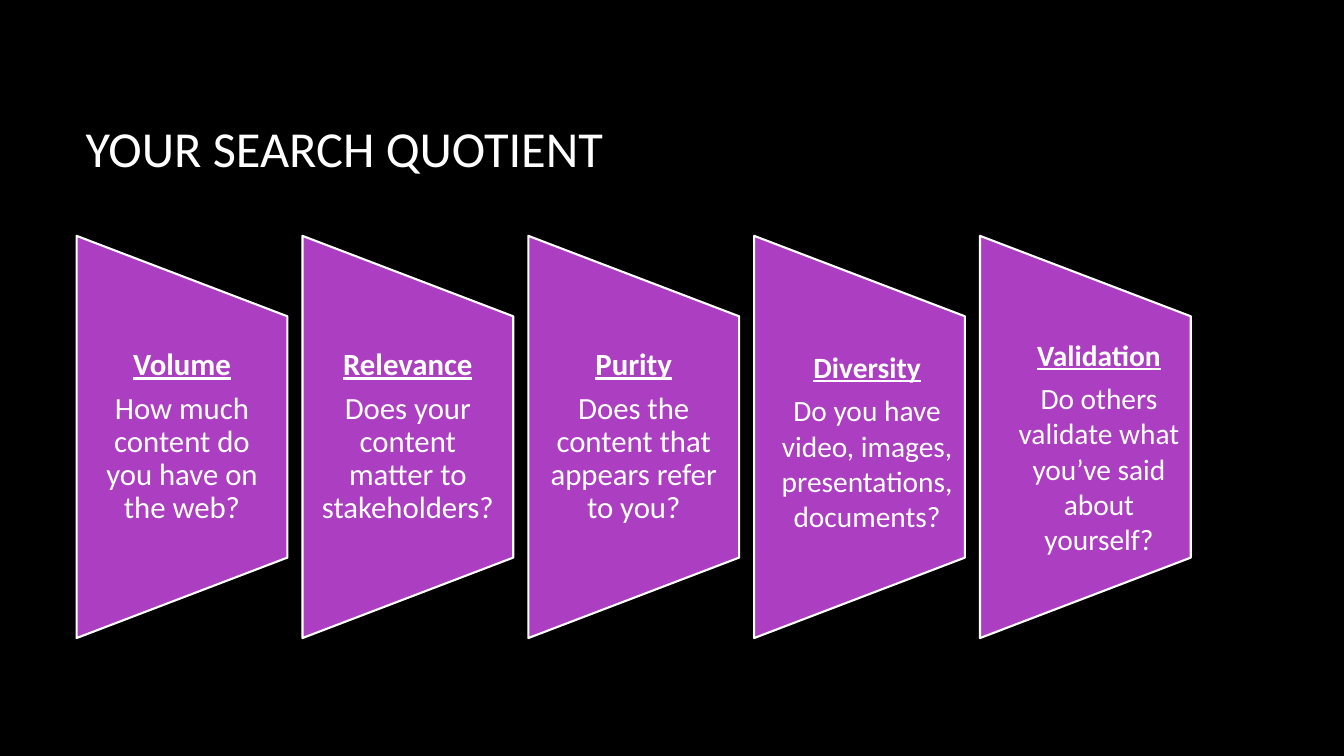
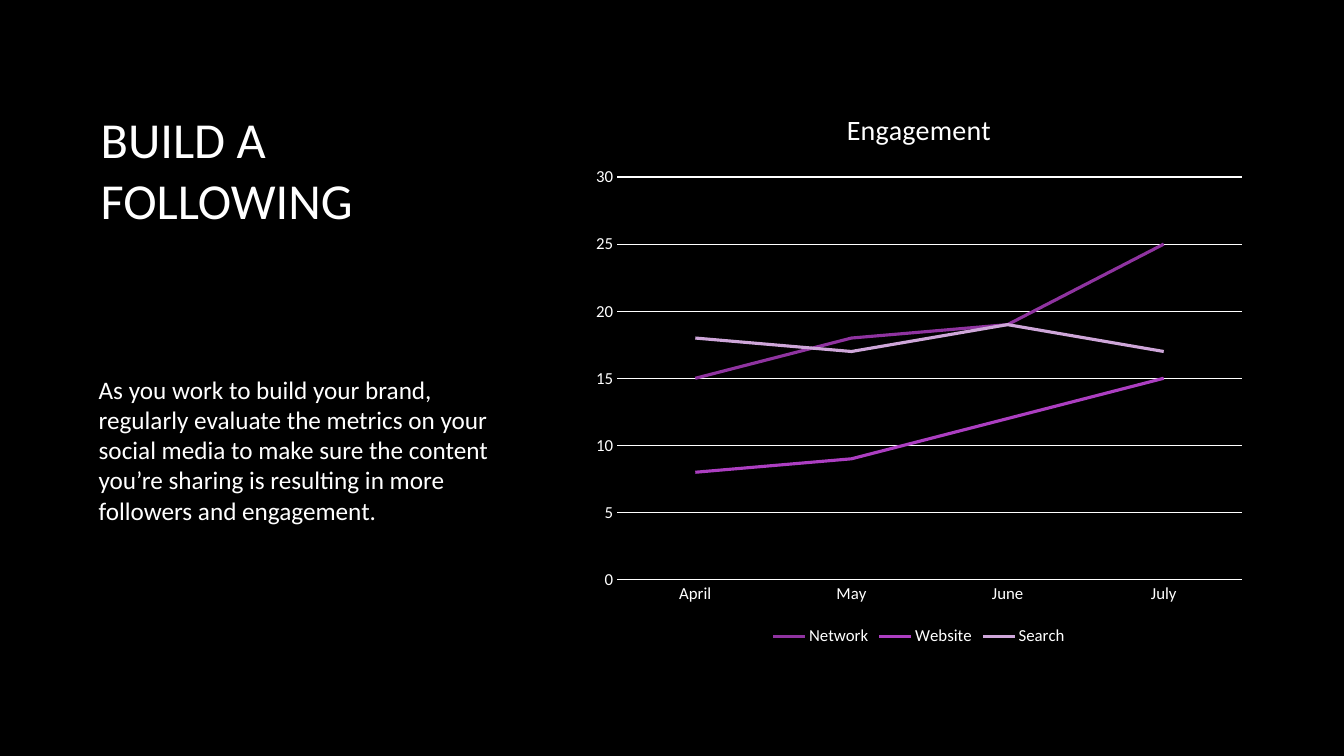
from dataclasses import dataclass

from lxml import etree
from pptx import Presentation
from pptx import util as u
from pptx.chart.data import CategoryChartData
from pptx.dml.color import RGBColor
from pptx.enum import chart as charts, shapes, text

Inches, Pt = u.Inches, u.Pt
CENTER = text.PP_ALIGN.CENTER
MIDDLE = text.MSO_ANCHOR.MIDDLE
TOP = text.MSO_ANCHOR.TOP


@dataclass(frozen=True)
class Theme:
    font: str = "Calibri"
    background: str = "000000"
    ink: str = "FFFFFF"
    panel: str = "AC3EC1"
    series: tuple = ("8F33A0", "AC3EC1", "CEA6D9")
    title_size: int = 36
    body_size: int = 18
    panel_size: int = 22
    note_size: int = 21
    chart_title_size: int = 20
    chart_size: int = 12


THEME = Theme()


def style_font(font, size, bold=False, underline=False):
    font.name = THEME.font
    font.size = Pt(size)
    font.bold = bold
    font.underline = underline
    font.color.rgb = RGBColor.from_string(THEME.ink)


def write(para, content, size, align=None, line_spacing=None,
          before=0, after=0, **font_format):
    para.alignment = align
    para.line_spacing = line_spacing
    para.space_before = Pt(before)
    para.space_after = Pt(after)
    span = para.add_run()
    span.text = content
    style_font(span.font, size, **font_format)


def set_line(line, colour, width):
    line.color.rgb = RGBColor.from_string(colour)
    line.width = Pt(width)


class Builder:
    def __init__(self):
        self.deck = Presentation()
        self.deck.slide_width = Inches(13.33)
        self.deck.slide_height = Inches(7.5)
        self.page = None

    def new_page(self):
        self.page = self.deck.slides.add_slide(self.deck.slide_layouts[6])
        fill = self.page.background.fill
        fill.solid()
        fill.fore_color.rgb = RGBColor.from_string(THEME.background)

    def text_box(self, left, top, width, height, anchor=MIDDLE, side=0.1, edge=0.05):
        box = self.page.shapes.add_textbox(
            Inches(left), Inches(top), Inches(width), Inches(height))
        frame = box.text_frame
        frame.word_wrap = True
        frame.vertical_anchor = anchor
        frame.margin_left = frame.margin_right = Inches(side)
        frame.margin_top = frame.margin_bottom = Inches(edge)
        return frame

    def title(self, content, left, top, width):
        frame = self.text_box(left, top, width, 1.59)
        write(frame.paragraphs[0], content, THEME.title_size)

    def body(self, content, left, top, width, height):
        frame = self.text_box(left, top, width, height)
        write(frame.paragraphs[0], content, THEME.body_size, after=10)

    def panel(self, left, top, width, height):
        """Draw a trapezoid on its side; the size is the one seen after turning."""
        shape = self.page.shapes.add_shape(
            shapes.MSO_SHAPE.FLOWCHART_MANUAL_OPERATION,
            Inches(left + (width - height) / 2), Inches(top + (height - width) / 2),
            Inches(height), Inches(width))
        shape.rotation = 270
        shape.shadow.inherit = False
        shape.fill.solid()
        shape.fill.fore_color.rgb = RGBColor.from_string(THEME.panel)
        set_line(shape.line, THEME.ink, 1.5)

    def heading_and_question(self, frame, heading, question, size, before=0, **spacing):
        write(frame.paragraphs[0], heading, size, align=CENTER,
              bold=True, underline=True, **spacing)
        write(frame.add_paragraph(), question, size, align=CENTER,
              before=before, **spacing)

    def line_chart(self, title, months, rows, left, top, width, height):
        data = CategoryChartData()
        data.categories = months
        for name, values in rows:
            data.add_series(name, values)
        chart = self.page.shapes.add_chart(
            charts.XL_CHART_TYPE.LINE, Inches(left), Inches(top),
            Inches(width), Inches(height), data).chart
        style_font(chart.font, THEME.chart_size)

        chart.has_title = True
        write(chart.chart_title.text_frame.paragraphs[0], title, THEME.chart_title_size)
        chart.chart_title.include_in_layout = False
        chart.has_legend = True
        chart.legend.position = charts.XL_LEGEND_POSITION.BOTTOM
        chart.legend.include_in_layout = False
        style_font(chart.legend.font, THEME.chart_size)

        for axis in (chart.category_axis, chart.value_axis):
            axis.major_tick_mark = axis.minor_tick_mark = charts.XL_TICK_MARK.NONE
            style_font(axis.tick_labels.font, THEME.chart_size)
        set_line(chart.category_axis.format.line, THEME.ink, 0.75)
        scale = chart.value_axis
        scale.minimum_scale, scale.maximum_scale, scale.major_unit = 0, 30, 5
        scale.format.line.fill.background()
        scale.has_major_gridlines = True
        set_line(scale.major_gridlines.format.line, THEME.ink, 0.75)

        plot = chart.plots[0]
        plot.vary_by_categories = False
        for series, colour in zip(plot.series, THEME.series):
            series.smooth = False
            series.marker.style = charts.XL_MARKER_STYLE.NONE
            set_line(series.format.line, colour, 2.25)


def build_quotient(builder):
    left, pitch, width = 0.76, 2.24, 2.09
    centred = (
        ("Volume", "How much content do you have on the web?"),
        ("Relevance", "Does your content matter to stakeholders?"),
        ("Purity", "Does the content that appears refer to you?"),
    )
    placed = (
        ("Diversity", "Do you have video, images, presentations, documents?",
         7.58, 3.41, 1.95),
        ("Validation", "Do others validate what you’ve said about yourself?",
         9.88, 3.29, 2.31),
    )
    builder.new_page()
    builder.title("YOUR SEARCH QUOTIENT", 0.75, 0.67, 11.08)
    for index in range(len(centred) + len(placed)):
        builder.panel(left + index * pitch, 2.34, width, 3.99)
    for index, (heading, question) in enumerate(centred):
        frame = builder.text_box(left + index * pitch, 3.14, width, 2.39,
                                 side=0.15, edge=0)
        builder.heading_and_question(frame, heading, question, THEME.panel_size,
                                     line_spacing=0.9, after=7.7)
    for heading, question, box_left, top, height in placed:
        frame = builder.text_box(box_left, top, 2.04, height, anchor=TOP)
        builder.heading_and_question(frame, heading, question, THEME.note_size,
                                     before=6)


def build_following(builder):
    builder.new_page()
    builder.title("BUILD A FOLLOWING", 0.9, 0.88, 4.35)
    builder.body(
        "As you work to build your brand, regularly evaluate the metrics on your "
        "social media to make sure the content you’re sharing is resulting in more "
        "followers and engagement.", 0.88, 2.47, 4.38, 3.98)
    builder.line_chart(
        "Engagement", ("April", "May", "June", "July"),
        (("Network", (15, 18, 19, 25)),
         ("Website", (8, 9, 12, 15)),
         ("Search", (18, 17, 19, 17))),
        5.78, 0.87, 6.67, 5.58)


def main():
    builder = Builder()
    build_quotient(builder)
    build_following(builder)
    builder.deck.save("out.pptx")


if __name__ == "__main__":
    main()
